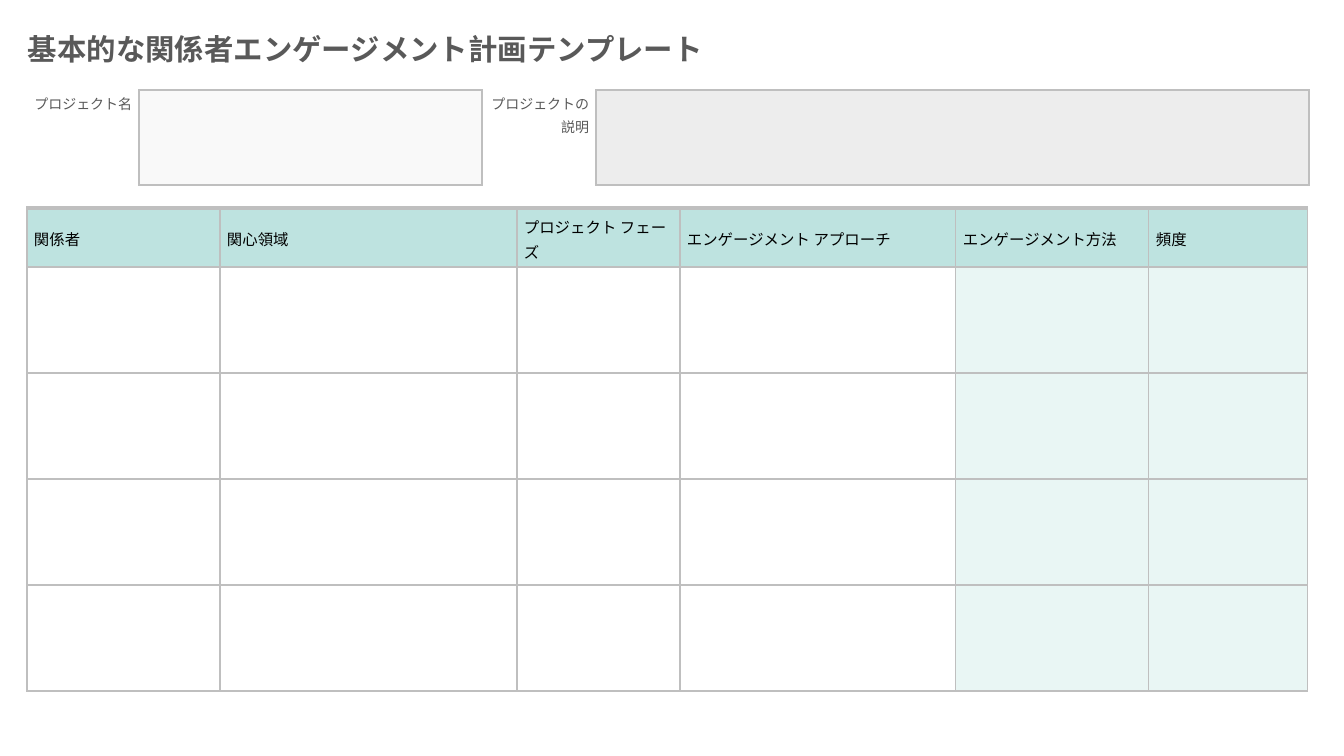
from lxml import etree
from pptx import Presentation
from pptx.dml.color import RGBColor
from pptx.enum.text import MSO_ANCHOR, MSO_AUTO_SIZE, PP_ALIGN
from pptx.oxml.ns import qn
from pptx.util import Pt

TITLE = "基本的な関係者エンゲージメント計画テンプレート"
# left, label width, box width, label lines, box colour
FIELDS = [
    (18, 121, 343, ["プロジェクト名"], RGBColor(0xF9, 0xF9, 0xF9)),
    (483, 113, 713, ["プロジェクトの", "説明"], RGBColor(0xED, 0xED, 0xED)),
]
COLUMNS = [
    ("関係者", 193),
    ("関心領域", 297),
    ("プロジェクト フェーズ", 163),
    ("エンゲージメント アプローチ", 276),
    ("エンゲージメント方法", 193),
    ("頻度", 159),
]
BODY_ROWS = 4
FIRST_TINTED_COLUMN = 4
HEADER_HEIGHT, BODY_HEIGHT = 59, 106

FONT = "Quicksand"
GREY = RGBColor(0x59, 0x59, 0x59)
BLACK = RGBColor(0x00, 0x00, 0x00)
WHITE = RGBColor(0xFF, 0xFF, 0xFF)
TEAL = RGBColor(0xBE, 0xE3, 0xE0)
PALE_TEAL = RGBColor(0xE9, 0xF6, 0xF4)
BORDER = RGBColor(0xBF, 0xBF, 0xBF)
RIGHT, LEFT = PP_ALIGN.RIGHT, PP_ALIGN.LEFT
TOP, MIDDLE = MSO_ANCHOR.TOP, MSO_ANCHOR.MIDDLE
FIT_SHAPE = MSO_AUTO_SIZE.SHAPE_TO_FIT_TEXT


def px(n):
    return round(n * 914400 / 100.8)


def add_plain_table(slide, left, top, widths, heights):
    """Add a table without banding or header styling."""
    table = slide.shapes.add_table(
        len(heights), len(widths), px(left), px(top),
        px(sum(widths)), px(sum(heights))).table
    table.first_row = table.horz_banding = False
    for column, width in zip(table.columns, widths):
        column.width = px(width)
    for row, height in zip(table.rows, heights):
        row.height = px(height)
    return table


def style_cell(cell, fill, left=1, right=1, top=1, bottom=1):
    """Set the fill and the border widths in points; 0 hides a border."""
    tc_pr = cell._tc.get_or_add_tcPr()
    for side, width in (("L", left), ("R", right), ("T", top), ("B", bottom)):
        ln = etree.SubElement(tc_pr, qn("a:ln" + side), w=str(Pt(width)))
        if width:
            solid = etree.SubElement(ln, qn("a:solidFill"))
            etree.SubElement(solid, qn("a:srgbClr"), val=str(BORDER))
        else:
            etree.SubElement(ln, qn("a:noFill"))
    if fill is None:
        cell.fill.background()
    else:
        cell.fill.solid()
        cell.fill.fore_color.rgb = fill


def add_run(p, text, size, color, bold=False):
    r = p.add_run()
    r.text = text
    r.font.name, r.font.size, r.font.bold = FONT, Pt(size), bold
    r.font.color.rgb = color


def write_cell(cell, lines, size, color, align, anchor):
    cell.margin_left = cell.margin_right = px(7)
    cell.margin_top = cell.margin_bottom = 0
    cell.vertical_anchor = anchor
    p = cell.text_frame.paragraphs[0]
    p.alignment, p.line_spacing = align, 1.15
    for i, line in enumerate(lines):
        if i:
            p.add_line_break()
        add_run(p, line, size, color)


def main():
    prs = Presentation()
    prs.slide_width, prs.slide_height = px(1344), px(756)
    slide = prs.slides.add_slide(prs.slide_layouts[6])

    tf = slide.shapes.add_textbox(px(18), px(26), px(920), px(45)).text_frame
    tf.word_wrap, tf.auto_size = True, FIT_SHAPE
    add_run(tf.paragraphs[0], TITLE, 21, GREY, bold=True)

    for left, label_width, box_width, lines, fill in FIELDS:
        table = add_plain_table(slide, left, 90, [label_width, box_width], [95])
        label, box = table.cell(0, 0), table.cell(0, 1)
        style_cell(label, None, left=0, top=0, bottom=0)
        write_cell(label, lines, 10, GREY, RIGHT, TOP)
        style_cell(box, fill, bottom=2.25)

    plan = add_plain_table(slide, 27, 208, [width for _, width in COLUMNS],
                           [HEADER_HEIGHT] + [BODY_HEIGHT] * BODY_ROWS)
    for c, (heading, _) in enumerate(COLUMNS):
        style_cell(plan.cell(0, c), TEAL, top=3)
        write_cell(plan.cell(0, c), [heading], 11, BLACK, LEFT, MIDDLE)
        body_fill = PALE_TEAL if c >= FIRST_TINTED_COLUMN else WHITE
        for r in range(1, BODY_ROWS + 1):
            style_cell(plan.cell(r, c), body_fill)

    prs.save("out.pptx")


if __name__ == "__main__":
    main()
